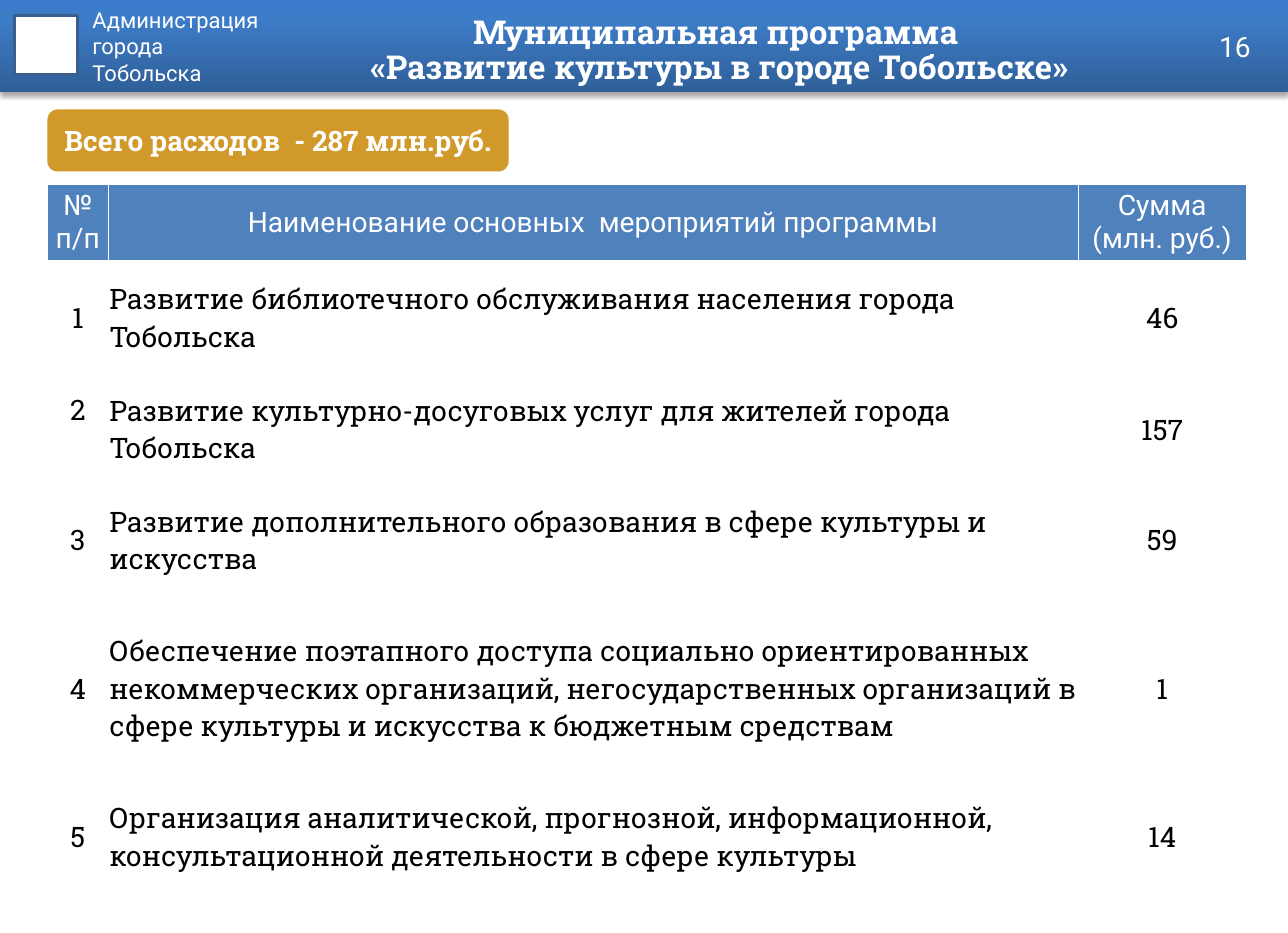
from dataclasses import dataclass

from lxml import etree
from pptx import Presentation
from pptx.dml.color import RGBColor
from pptx.enum.shapes import MSO_SHAPE as Preset
from pptx.enum.text import MSO_ANCHOR as Anchor, PP_ALIGN as Align
from pptx.oxml import parse_xml
from pptx.util import Inches, Pt

OFFICE = ["Администрация", "города", "Тобольска"]
TITLE = ["Муниципальная программа ", "«Развитие культуры в городе Тобольске»"]
TOTAL = "Всего расходов  - 287 млн.руб."
PAGE_NUMBER = "16"
HEADINGS = [["№", "п/п"], ["Наименование основных  мероприятий программы"],
            ["Сумма", "(млн. руб.)"]]
ACTIVITIES = [
    ("Развитие библиотечного обслуживания населения города Тобольска", 46),
    ("Развитие культурно-досуговых услуг для жителей города Тобольска", 157),
    ("Развитие дополнительного образования в сфере культуры и искусства", 59),
    ("Обеспечение поэтапного доступа социально ориентированных некоммерческих "
     "организаций, негосударственных организаций в сфере культуры и искусства "
     "к бюджетным средствам", 1),
    ("Организация аналитической, прогнозной, информационной, "
     "консультационной деятельности в сфере культуры", 14),
]

WIDTH, HEIGHT = 11.42, 8.27
BANNER_HEIGHT = 0.82
MARGIN = 0.42
TABLE_TOP = 1.63
COLUMNS = [0.54, 8.6, 1.49]
ROWS = [0.68, 1, 0.98, 0.98, 1.65, 0.98]
RAISED_NUMBER = 2  # this row's number sits level with the first text line
RAISE = 0.34
DRAWING_NS = "http://schemas.openxmlformats.org/drawingml/2006/main"


@dataclass(frozen=True)
class Theme:
    sans: str = "Roboto"
    slab: str = "Roboto Slab"
    white: str = "FFFFFF"
    black: str = "000000"
    heading: str = "4F81BD"
    emblem_line: str = "3A5F8C"
    gold: str = "D1982A"
    banner: tuple = ((0, "2F5F99"), (80, "3D7CC7"), (100, "3A7CCB"))
    small: int = 14
    body: int = 18
    title: int = 21


THEME = Theme()


def color(value):
    return RGBColor.from_string(value)


def drawing(tag, body, attributes=""):
    return parse_xml(f'<a:{tag} xmlns:a="{DRAWING_NS}" {attributes}>{body}</a:{tag}>')


def write(frame, lines, size, face, ink=THEME.white, bold=False, align=Align.LEFT):
    """Put each line in a paragraph of its own."""
    for index, line in enumerate(lines):
        para = frame.add_paragraph() if index else frame.paragraphs[0]
        para.alignment = align
        span = para.add_run()
        span.text = line
        font = span.font
        font.size, font.name, font.bold = Pt(size), face, bold
        font.color.rgb = color(ink)


def set_insets(frame):
    frame.margin_left = frame.margin_right = Inches(0.11)
    frame.margin_top = frame.margin_bottom = Inches(0.06)
    frame.word_wrap = True


def add_text(page, area, lines, anchor=Anchor.MIDDLE, **style):
    frame = page.shapes.add_textbox(*map(Inches, area)).text_frame
    set_insets(frame)
    frame.vertical_anchor = anchor
    write(frame, lines, **style)
    return frame


def add_block(page, preset, area, fill=None, line=None):
    box = page.shapes.add_shape(preset, *map(Inches, area))
    box.shadow.inherit = False
    if fill:
        box.fill.solid()
        box.fill.fore_color.rgb = color(fill)
    if line:
        box.line.color.rgb = color(line)
        box.line.width = Pt(2)
    else:
        box.line.fill.background()
    return box


def add_banner(page):
    banner = add_block(page, Preset.RECTANGLE, (0, 0, WIDTH, BANNER_HEIGHT))
    stops = "".join(f'<a:gs pos="{share * 1000}"><a:srgbClr val="{tone}"/></a:gs>'
                    for share, tone in THEME.banner)
    gradient = drawing("gradFill", f'<a:gsLst>{stops}</a:gsLst>'
                       '<a:lin ang="16200000" scaled="0"/>', 'rotWithShape="1"')
    properties = banner.element.spPr
    properties.find(f"{{{DRAWING_NS}}}prstGeom").addnext(gradient)
    shadow = properties.find(f"{{{DRAWING_NS}}}effectLst")
    shadow.append(drawing(
        "outerShdw",
        f'<a:srgbClr val="{THEME.black}"><a:alpha val="35000"/></a:srgbClr>',
        f'blurRad="{Pt(3.1)}" dist="{Pt(1.8)}" dir="5400000" rotWithShape="0"'))


def add_title(page):
    frame = add_text(page, (2.09, 0, 8.58, 0.91), [], size=THEME.title, face=THEME.slab)
    write(frame, TITLE[:1], THEME.title, THEME.slab, bold=True, align=Align.CENTER)
    para = frame.paragraphs[0]
    para.line_spacing = 0.9
    para.add_line_break()
    span = para.add_run()
    span.text = TITLE[1]
    span.font.size, span.font.name, span.font.bold = Pt(THEME.title), THEME.slab, True
    span.font.color.rgb = color(THEME.white)


def add_borders(cell):
    properties = cell._tc.get_or_add_tcPr()
    for index, side in enumerate(("lnL", "lnR", "lnT", "lnB")):
        border = drawing(
            side, f'<a:solidFill><a:srgbClr val="{THEME.white}"/></a:solidFill>',
            f'w="{Pt(1)}"')
        properties.insert(index, border)


def add_activities(page):
    shape = page.shapes.add_table(
        len(ROWS), len(COLUMNS), *map(Inches, (MARGIN, TABLE_TOP, sum(COLUMNS), sum(ROWS))))
    table = shape.table
    table.horz_banding = False
    for column, width in zip(table.columns, COLUMNS):
        column.width = Inches(width)
    for row, height in zip(table.rows, ROWS):
        row.height = Inches(height)
    content = [HEADINGS] + [[[str(number)], [name], [str(amount)]]
                            for number, (name, amount) in enumerate(ACTIVITIES, 1)]
    for r, line in enumerate(content):
        for c, lines in enumerate(line):
            cell = table.cell(r, c)
            cell.margin_left = cell.margin_right = cell.margin_top = Inches(0.01)
            cell.margin_bottom = Inches(RAISE if (r, c) == (RAISED_NUMBER, 0) else 0)
            cell.vertical_anchor = Anchor.MIDDLE
            if r == 0:
                cell.fill.solid()
                cell.fill.fore_color.rgb = color(THEME.heading)
            else:
                cell.fill.background()
            add_borders(cell)
            write(cell.text_frame, lines, THEME.body,
                  face=THEME.slab if r else THEME.sans,
                  ink=THEME.black if r else THEME.white,
                  align=Align.LEFT if r and c == 1 else Align.CENTER)


def main():
    deck = Presentation()
    deck.slide_width, deck.slide_height = Inches(WIDTH), Inches(HEIGHT)
    page = deck.slides.add_slide(deck.slide_layouts[6])

    add_banner(page)
    add_block(page, Preset.RECTANGLE, (0.13, 0.14, 0.56, 0.52),
              THEME.white, THEME.emblem_line)
    add_text(page, (0.71, 0, 2.68, 1.06), OFFICE, Anchor.TOP,
             size=THEME.small, face=THEME.sans)
    add_title(page)

    total = add_block(page, Preset.ROUNDED_RECTANGLE, (MARGIN, 0.97, 4.09, 0.55), THEME.gold)
    set_insets(total.text_frame)
    total.text_frame.vertical_anchor = Anchor.MIDDLE
    write(total.text_frame, [TOTAL], THEME.body, THEME.slab, bold=True, align=Align.CENTER)

    add_activities(page)
    add_text(page, (8.54, 0.19, 2.66, 0.44), [PAGE_NUMBER],
             size=THEME.body, face=THEME.sans, align=Align.RIGHT)
    deck.save("out.pptx")


if __name__ == "__main__":
    main()
